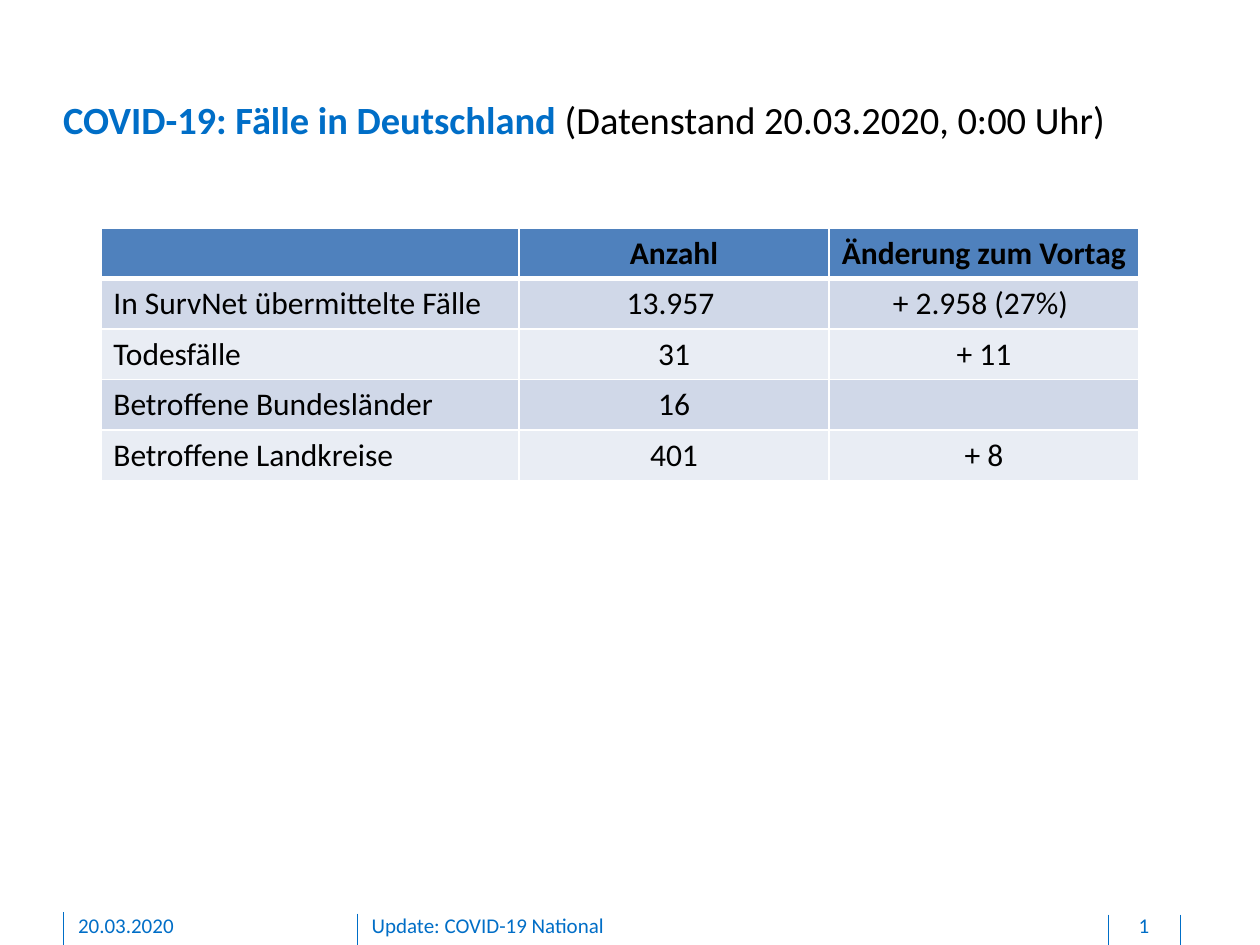
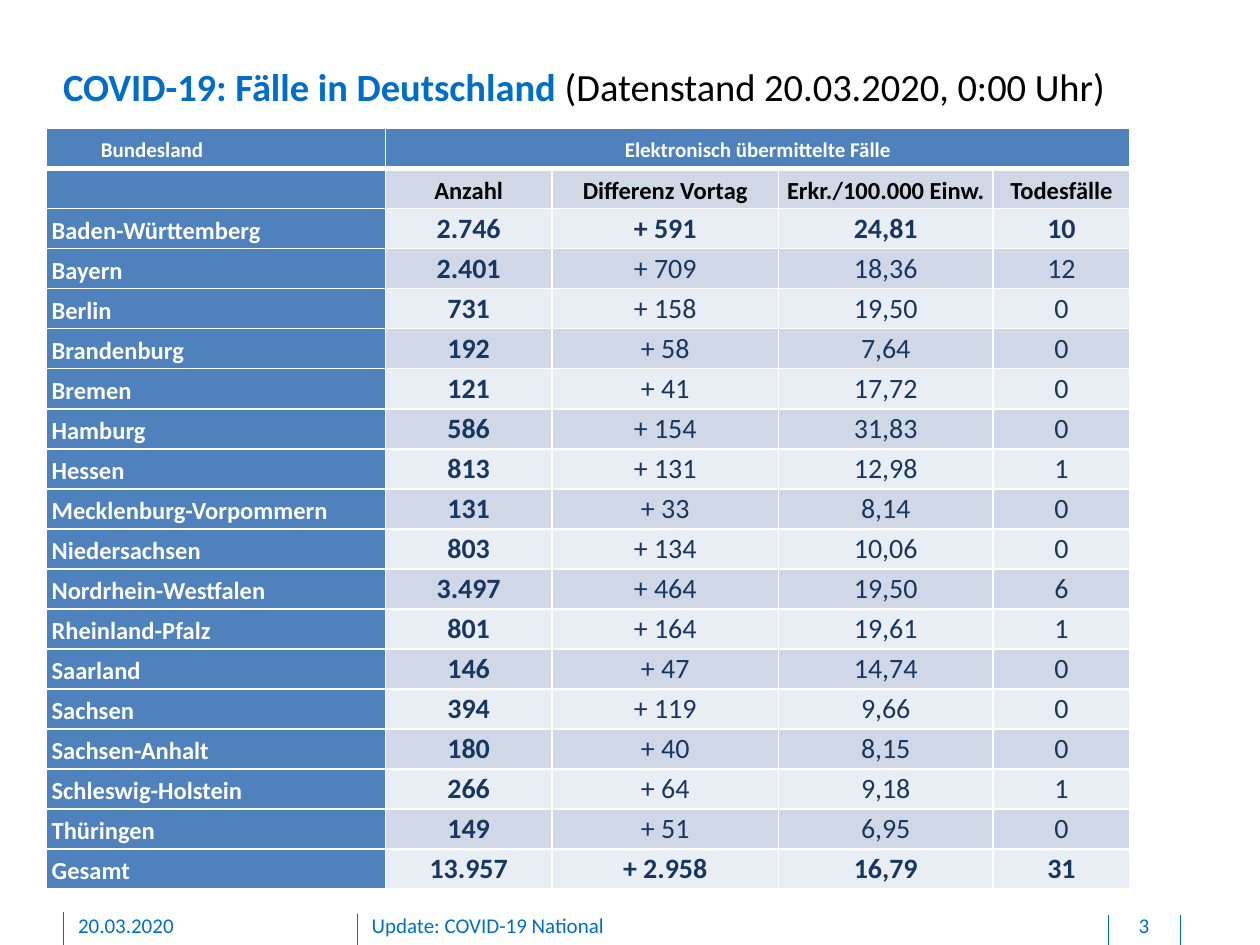
from lxml.etree import SubElement
from pptx import Presentation
from pptx.dml.color import RGBColor
from pptx.enum.shapes import MSO_CONNECTOR
from pptx.enum.text import MSO_ANCHOR, PP_ALIGN
from pptx.oxml.ns import qn
from pptx.util import Inches, Pt

# Content
TITLE = ("COVID-19: Fälle in Deutschland ", "(Datenstand 20.03.2020, 0:00 Uhr)")
DATE = "20.03.2020"
FOOTER = "Update: COVID-19 National"

OVERVIEW = [
    ("", "Anzahl", "Änderung zum Vortag"),
    ("In SurvNet übermittelte Fälle", "13.957 ", "+ 2.958 (27%) "),
    ("Todesfälle", "31", "+ 11"),
    ("Betroffene Bundesländer", "16", ""),
    ("Betroffene Landkreise", "401", "+ 8"),
]
STATES = [
    ("Bundesland", "Elektronisch übermittelte Fälle", "", "", ""),
    ("", "Anzahl", "Differenz Vortag", "Erkr./100.000 Einw.", "Todesfälle"),
    ("Baden-Württemberg", "2.746", "+ 591", "24,81", "10"),
    ("Bayern", "2.401", "+ 709", "18,36", "12"),
    ("Berlin", "731", "+ 158", "19,50", "0"),
    ("Brandenburg", "192", "+ 58", "7,64", "0"),
    ("Bremen", "121", "+ 41", "17,72", "0"),
    ("Hamburg", "586", "+ 154", "31,83", "0"),
    ("Hessen", "813", "+ 131", "12,98", "1"),
    ("Mecklenburg-Vorpommern", "131", "+ 33", "8,14", "0"),
    ("Niedersachsen", "803", "+ 134", "10,06", "0"),
    ("Nordrhein-Westfalen", "3.497", "+ 464", "19,50", "6"),
    ("Rheinland-Pfalz", "801", "+ 164", "19,61", "1"),
    ("Saarland", "146", "+ 47", "14,74", "0"),
    ("Sachsen", "394", "+ 119", "9,66", "0"),
    ("Sachsen-Anhalt", "180", "+ 40", "8,15", "0"),
    ("Schleswig-Holstein", "266", "+ 64", "9,18", "1"),
    ("Thüringen", "149", "+ 51", "6,95", "0"),
    ("Gesamt", "13.957", "+ 2.958", "16,79", "31"),
]
BOLD_STATES = ("Baden-Württemberg", "Gesamt")

# Shared style
FONT = "Calibri"
COLORS = {
    "accent": "006EC7", "black": "000000", "white": "FFFFFF", "navy": "17375E",
    "header": "4F81BD", "band_dark": "D0D8E8", "band_light": "E9EDF4",
}
FOOTER_LINES = [(0.5, 7.24), (2.84, 7.25), (8.8, 7.26), (9.37, 7.26)]  # x, top


def color(name):
    return RGBColor.from_string(COLORS[name])


def add_text(paragraph, text, size=12, fill="accent", bold=False,
             align=PP_ALIGN.LEFT, spacing=None):
    paragraph.alignment = align
    if spacing:
        paragraph.line_spacing = spacing
    run = paragraph.add_run()
    run.text = text
    run.font.name = FONT
    run.font.size = Pt(size)
    run.font.bold = bold
    run.font.color.rgb = color(fill)


def set_insets(frame, left=0, top=0, right=0, bottom=0):
    frame.margin_left, frame.margin_top = Inches(left), Inches(top)
    frame.margin_right, frame.margin_bottom = Inches(right), Inches(bottom)


def add_footer(slide, number):
    for x, top in FOOTER_LINES:
        line = slide.shapes.add_connector(
            MSO_CONNECTOR.STRAIGHT, Inches(x), Inches(top), Inches(x), Inches(7.5))
        line.line.color.rgb = color("accent")
        line.line.width = Pt(0.5)
        SubElement(line.element.spPr, qn("a:effectLst"))
    for text, left, width, align in (
            (DATE, 0.62, 2.03, PP_ALIGN.LEFT),
            (FOOTER, 2.95, 5.67, PP_ALIGN.LEFT),
            (number, 8.81, 0.54, PP_ALIGN.CENTER)):
        box = slide.shapes.add_textbox(
            Inches(left), Inches(7.24), Inches(width), Inches(0.21))
        box.text_frame.word_wrap = True
        set_insets(box.text_frame, bottom=0.05)
        add_text(box.text_frame.paragraphs[0], text, align=align)


def add_slide(presentation, number, title_top):
    slide = presentation.slides.add_slide(presentation.slide_layouts[5])
    title = slide.shapes.title
    title.left, title.top = Inches(0.5), Inches(title_top)
    title.width, title.height = Inches(8.85), Inches(0.37)
    frame = title.text_frame
    frame.word_wrap = True
    frame.vertical_anchor = MSO_ANCHOR.TOP
    set_insets(frame)
    topic, status = TITLE
    add_text(frame.paragraphs[0], topic, size=22, bold=True)
    add_text(frame.paragraphs[0], status, size=22, fill="black")
    add_footer(slide, number)
    return slide


def set_borders(cell, row):
    """White grid, thicker between the first row and the second."""
    properties = cell._tc.get_or_add_tcPr()
    widths = {"lnL": 1, "lnR": 1, "lnT": 3 if row == 1 else 1, "lnB": 3 if row == 0 else 1}
    for position, (tag, width) in enumerate(widths.items()):
        border = properties.makeelement(qn(f"a:{tag}"), {"w": str(Pt(width))})
        fill = SubElement(border, qn("a:solidFill"))
        SubElement(fill, qn("a:srgbClr"), val=COLORS["white"])
        properties.insert(position, border)


def add_table(slide, rows, left, top, widths, row_height, fill_cell):
    table = slide.shapes.add_table(
        len(rows), len(widths), Inches(left), Inches(top),
        Inches(sum(widths)), Inches(row_height * len(rows))).table
    for column, width in zip(table.columns, widths):
        column.width = Inches(width)
    for r, values in enumerate(rows):
        table.rows[r].height = Inches(row_height)
        for c, text in enumerate(values):
            cell = table.cell(r, c)
            cell.fill.solid()
            fill_cell(cell, r, c, text)
            set_borders(cell, r)
    return table


def band(row):
    return "band_dark" if row % 2 else "band_light"


def fill_overview_cell(cell, row, column, text):
    cell.fill.fore_color.rgb = color("header" if row == 0 else band(row))
    if text:
        add_text(cell.text_frame.paragraphs[0], text, size=18, fill="black",
                 bold=row == 0, align=PP_ALIGN.CENTER if column else PP_ALIGN.LEFT)


def fill_states_cell(cell, row, column, text):
    is_header = row == 0 or column == 0
    is_value = row > 1 and column > 0
    cell.fill.fore_color.rgb = color("header" if is_header else band(row))
    cell.vertical_anchor = MSO_ANCHOR.MIDDLE
    side = 0.07 if is_value else 0.04
    set_insets(cell, left=side, right=side)
    if not text:
        return
    paragraph = cell.text_frame.paragraphs[0]
    add_text(
        paragraph, text,
        size=16 if is_value else 12 if row == 0 else 14,
        fill="navy" if is_value else "white" if is_header else "black",
        bold=not is_value or column == 1 or STATES[row][0] in BOLD_STATES,
        align=PP_ALIGN.CENTER if column else PP_ALIGN.LEFT,
        spacing=None if is_value else 1.15)
    if row == 0 and column == 0:
        paragraph._p.get_or_add_pPr().set("indent", str(Inches(0.39)))


def main():
    presentation = Presentation()
    presentation.slide_width, presentation.slide_height = Inches(10), Inches(7.5)

    # National overview
    slide = add_slide(presentation, "1", title_top=0.76)
    add_table(slide, OVERVIEW, 0.8, 1.81, (3.32, 2.46, 2.46), 0.4, fill_overview_cell)

    # Cases by state
    slide = add_slide(presentation, "3", title_top=0.5)
    table = add_table(slide, STATES, 0.37, 1.02, (2.69, 1.32, 1.8, 1.7, 1.09),
                      6.04 / len(STATES), fill_states_cell)
    table.cell(0, 1).merge(table.cell(0, 4))

    presentation.save("out.pptx")


if __name__ == "__main__":
    main()
